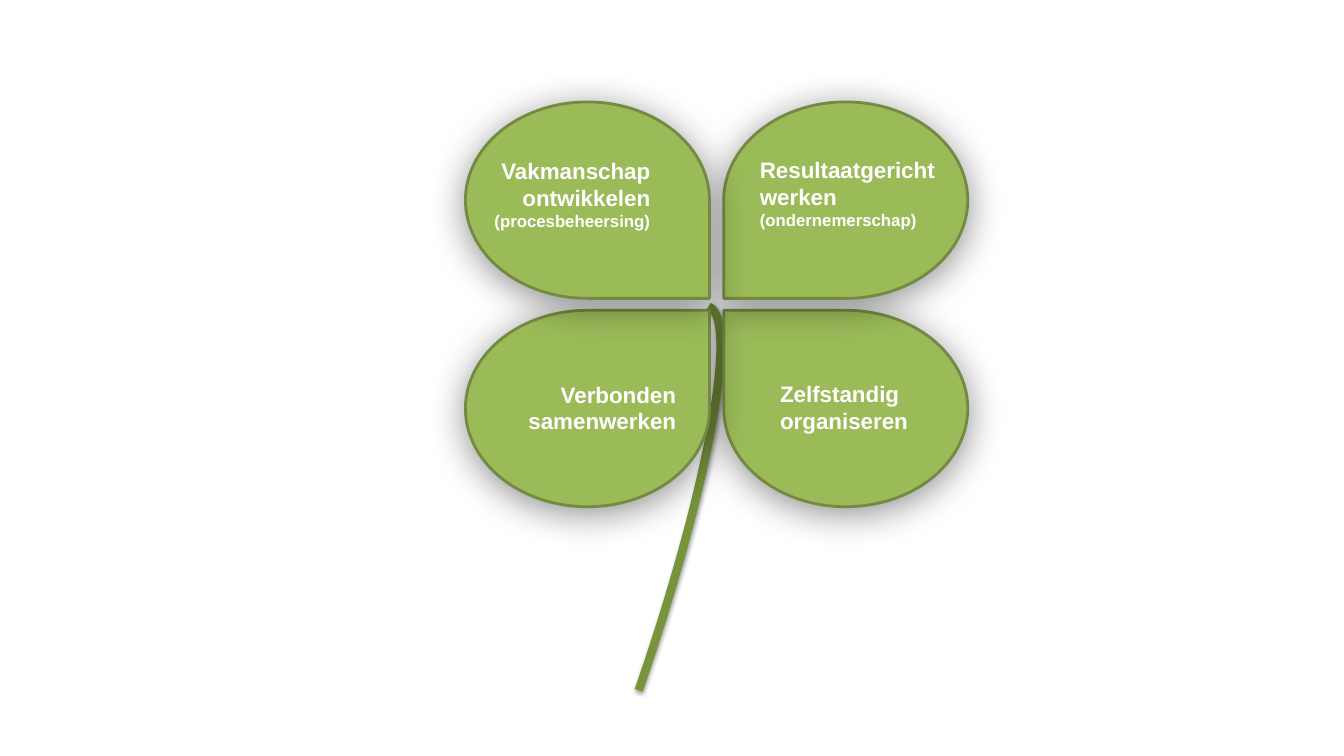
from dataclasses import dataclass

from lxml.etree import SubElement
from pptx import Presentation
from pptx.dml.color import RGBColor
from pptx.enum.shapes import MSO_SHAPE
from pptx.enum.text import MSO_AUTO_SIZE, PP_ALIGN
from pptx.oxml.ns import qn
from pptx.shapes.autoshape import Shape
from pptx.slide import Slide
from pptx.util import Cm, Pt

LEAF_W, LEAF_H = 6.15, 4.95
LEFT, TOP = 11.73, 2.57
PITCH_X, PITCH_Y = 6.51, 5.25


@dataclass(frozen=True)
class Leaf:
    col: int
    row: int
    label_box: tuple[float, float, float, float]
    lines: tuple[tuple[str, int], ...]


LEAVES = [
    Leaf(1, 1, (19.41, 9.45, 5.28, 1.63), (("Zelfstandig", 16), ("organiseren", 16))),
    Leaf(1, 0, (18.9, 3.81, 5.54, 2.13),
         (("Resultaatgericht werken", 16), ("(ondernemerschap)", 12))),
    Leaf(0, 1, (12.34, 9.47, 4.95, 1.63), (("Verbonden samenwerken", 16),)),
    Leaf(0, 0, (11.56, 3.84, 5.08, 2.13),
         (("Vakmanschap ontwikkelen", 16), ("(procesbeheersing)", 12))),
]


def rgb(color: str) -> RGBColor:
    return RGBColor.from_string(color)


def add_shadow(sp: Shape, alpha: int, blur: float, dist: float) -> None:
    sp.shadow.inherit = False
    effects = sp._element.spPr.find(qn("a:effectLst"))
    shadow = SubElement(effects, qn("a:outerShdw"), blurRad=str(Pt(blur)),
                        dist=str(Pt(dist)), dir="5400000", rotWithShape="0")
    color = SubElement(shadow, qn("a:srgbClr"), val="000000")
    SubElement(color, qn("a:alpha"), val=str(alpha * 1000))


def set_line(sp: Shape, color: str, width: float) -> None:
    sp.line.color.rgb = rgb(color)
    sp.line.width = Pt(width)


def add_stem(s: Slide) -> None:
    sp = s.shapes.add_shape(MSO_SHAPE.ARC, Cm(13.18), Cm(7.19), Cm(3), Cm(19.43))
    sp.rotation = 19.1
    sp.fill.background()
    set_line(sp, "77933C", 6)
    add_shadow(sp, alpha=38, blur=3.1, dist=1.6)


def add_leaf(s: Slide, leaf: Leaf) -> None:
    sp = s.shapes.add_shape(MSO_SHAPE.TEAR, Cm(LEFT + leaf.col * PITCH_X),
                            Cm(TOP + leaf.row * PITCH_Y), Cm(LEAF_W), Cm(LEAF_H))
    xfrm = sp._element.spPr.find(qn("a:xfrm"))
    if leaf.col == 1:
        xfrm.set("flipH", "1")
    if leaf.row == 0:
        xfrm.set("flipV", "1")
    sp.fill.solid()
    sp.fill.fore_color.rgb = rgb("9BBB59")
    set_line(sp, "738A42", 2)
    add_shadow(sp, alpha=43, blur=27, dist=4)


def add_label(s: Slide, leaf: Leaf) -> None:
    tf = s.shapes.add_textbox(*map(Cm, leaf.label_box)).text_frame
    tf.word_wrap = True
    tf.auto_size = MSO_AUTO_SIZE.SHAPE_TO_FIT_TEXT
    for i, (text, size) in enumerate(leaf.lines):
        p = tf.add_paragraph() if i else tf.paragraphs[0]
        p.alignment = PP_ALIGN.LEFT if leaf.col else PP_ALIGN.RIGHT
        add_run(p, text, size=size, color="FFFFFF", bold=True)


def add_run(p, text: str, *, size: int, color: str, bold: bool = False,
            font: str = "Arial") -> None:
    r = p.add_run()
    r.text = text
    r.font.name = font
    r.font.size = Pt(size)
    r.font.bold = bold
    r.font.color.rgb = rgb(color)


def main() -> None:
    prs = Presentation()
    prs.slide_width, prs.slide_height = Cm(33.87), Cm(19.05)
    s = prs.slides.add_slide(prs.slide_layouts[6])
    add_stem(s)
    for leaf in LEAVES:
        add_leaf(s, leaf)
    for leaf in LEAVES:
        add_label(s, leaf)
    prs.save("out.pptx")


if __name__ == "__main__":
    main()
